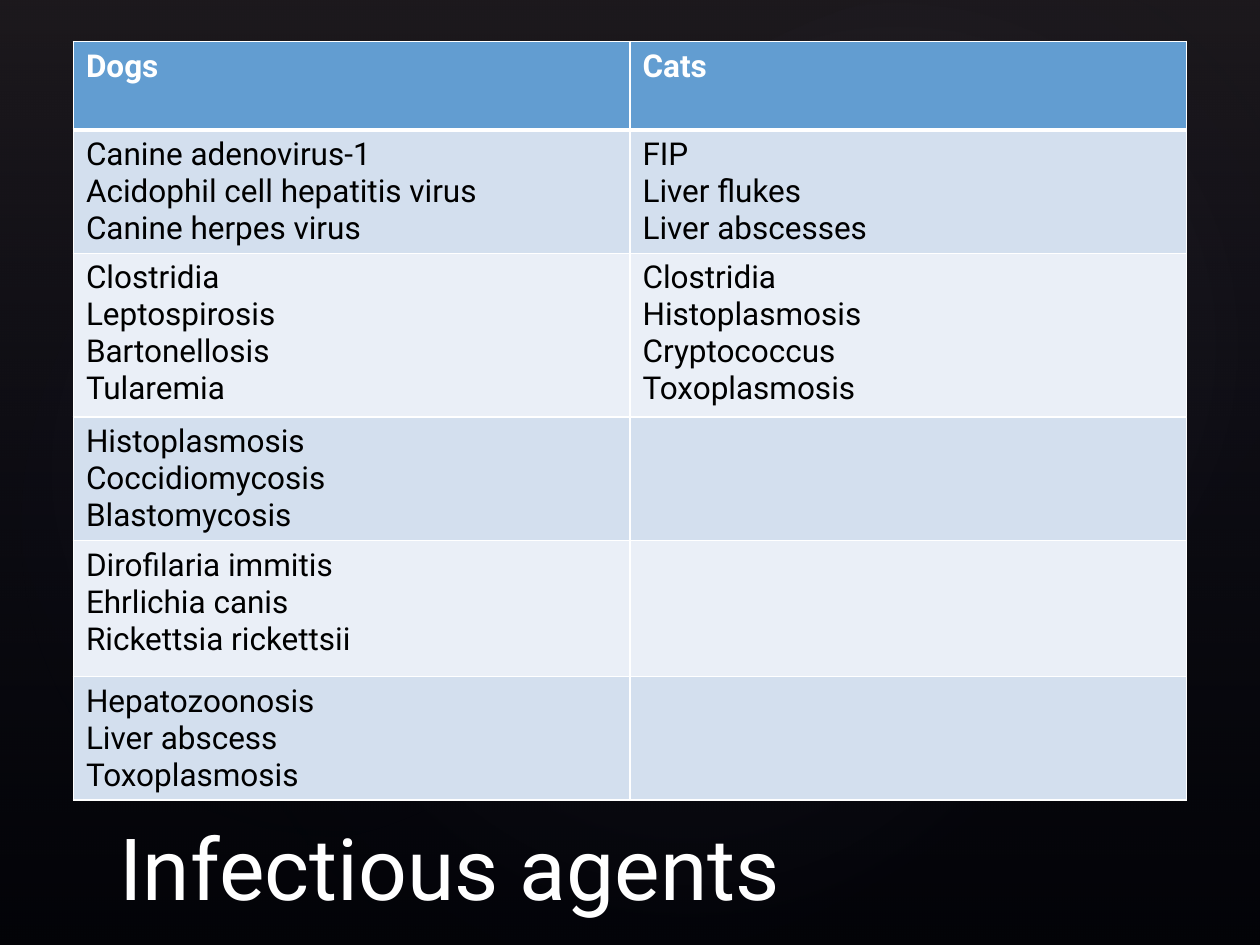
from lxml import etree
from pptx import Presentation
from pptx.dml.color import RGBColor as RGB
from pptx.enum.shapes import MSO_SHAPE as SHAPE
from pptx.enum.text import MSO_ANCHOR as ANCHOR, PP_ALIGN as ALIGN
from pptx.oxml import parse_xml
from pptx.oxml.ns import nsdecls, qn
from pptx.util import Cm, Pt

FONT = "Roboto"
COLORS = {
    "back": "000000", "plum": "504652", "navy": "242852", "mist": "C4BCC6",
    "white": "FFFFFF", "black": "000000",
    "header": "629DD1", "odd": "D3DFEE", "even": "EAEFF7",
}
LINEAR = '<a:lin ang="5400000" scaled="0"/>'
RADIAL = ('<a:path path="circle"><a:fillToRect l="50000" t="50000" '
          'r="50000" b="50000"/></a:path>')
GLOWS = [
    ((3.81, 2.9, 20.12, 15.85), 328.7, 7),
    ((-0.76, 3.25, 15.39, 12.45), 294.3, 8),
    ((9.09, 0.33, 18.01, 13.21), 328.7, 8),
]
ROWS = [
    (1.78, ["Dogs"], ["Cats"]),
    (2.48, ["Canine adenovirus-1", "Acidophil cell hepatitis virus",
            "Canine herpes virus"],
     ["FIP", "Liver flukes", "Liver abscesses"]),
    (3.3, ["Clostridia", "Leptospirosis", "Bartonellosis", "Tularemia"],
     ["Clostridia", "Histoplasmosis", "Cryptococcus", "Toxoplasmosis"]),
    (2.48, ["Histoplasmosis", "Coccidiomycosis", "Blastomycosis"], []),
    (2.74, ["Dirofilaria immitis", "Ehrlichia canis",
            "Rickettsia rickettsii"], []),
    (2.48, ["Hepatozoonosis", "Liver abscess", "Toxoplasmosis"], []),
]


def rgb(name):
    return RGB.from_string(COLORS[name])


def add_text(p, text, size, color, bold=False):
    r = p.add_run()
    r.text = text
    r.font.name = FONT
    r.font.size = Pt(size)
    r.font.bold = bold
    r.font.color.rgb = rgb(color)


def add_gradient_shape(s, kind, box, stops, direction, rotation=0):
    sp = s.shapes.add_shape(kind, *map(Cm, box))
    sp.rotation = rotation
    sp.shadow.inherit = False
    sp.line.fill.background()
    sp.fill.background()
    stop_xml = "".join(
        f'<a:gs pos="{pos * 1000}"><a:srgbClr val="{COLORS[color]}">'
        f'<a:alpha val="{alpha * 1000}"/></a:srgbClr></a:gs>'
        for pos, color, alpha in stops)
    gradient = parse_xml(f'<a:gradFill {nsdecls("a")} rotWithShape="1">'
                         f'<a:gsLst>{stop_xml}</a:gsLst>{direction}</a:gradFill>')
    sp_pr = sp._element.spPr
    sp_pr.replace(sp_pr.find(qn("a:noFill")), gradient)
    return sp


def add_backdrop(prs, s, box):
    left, top, width, height = box
    fill = prs.slide_master.background.fill
    fill.solid()
    fill.fore_color.rgb = rgb("back")
    parts = [add_gradient_shape(s, SHAPE.RECTANGLE, box,
                                [(0, "plum", 36), (100, "navy", 10)], LINEAR)]
    for (x, y, w, h), rotation, alpha in GLOWS:
        parts.append(add_gradient_shape(
            s, SHAPE.OVAL, (left + x, top + y, w, h),
            [(0, "mist", alpha), (58, "navy", 0)], RADIAL, rotation))
    for number, sp in enumerate(parts, 101):
        sp._element.nvSpPr.cNvPr.set("id", str(number))
        prs.slide_master.shapes._spTree.append(sp._element)


def add_title(s, box):
    title = s.shapes.title
    title.left, title.top, title.width, title.height = map(Cm, box)
    tf = title.text_frame
    tf.vertical_anchor = ANCHOR.BOTTOM
    tf.word_wrap = True
    p = tf.paragraphs[0]
    p.alignment = ALIGN.LEFT
    add_text(p, "Infectious agents", 49, "white")


def set_borders(cell, widths):
    tc_pr = cell._tc.get_or_add_tcPr()
    for side, width in widths.items():
        ln = etree.SubElement(tc_pr, qn(f"a:ln{side}"), w=str(Pt(width)))
        solid = etree.SubElement(ln, qn("a:solidFill"))
        etree.SubElement(solid, qn("a:srgbClr"), val=COLORS["white"])


def add_agents_table(s, box):
    left, top, width = box
    height = sum(row[0] for row in ROWS)
    table = s.shapes.add_table(len(ROWS), 2, Cm(left), Cm(top),
                               Cm(width), Cm(height)).table
    for column in table.columns:
        column.width = Cm(width / 2)
    for i, (row_height, *columns) in enumerate(ROWS):
        table.rows[i].height = Cm(row_height)
        header = i == 0
        fill = "header" if header else "odd" if i % 2 else "even"
        for j, lines in enumerate(columns):
            cell = table.cell(i, j)
            set_borders(cell, {"L": 1, "R": 1, "T": 3 if i == 1 else 1,
                               "B": 3 if header else 1})
            cell.fill.solid()
            cell.fill.fore_color.rgb = rgb(fill)
            tf = cell.text_frame
            for k, line in enumerate(lines):
                p = tf.add_paragraph() if k else tf.paragraphs[0]
                add_text(p, line, 18, "white" if header else "black", header)


def main():
    prs = Presentation()
    prs.slide_width, prs.slide_height = Cm(25.4), Cm(19.05)
    s = prs.slides.add_slide(prs.slide_layouts[5])
    add_backdrop(prs, s, (0, 0, 25.4, 19.05))
    add_title(s, (2.16, 16.08, 20.96, 2.54))
    add_agents_table(s, (1.48, 0.84, 22.44))
    prs.save("out.pptx")


if __name__ == "__main__":
    main()
